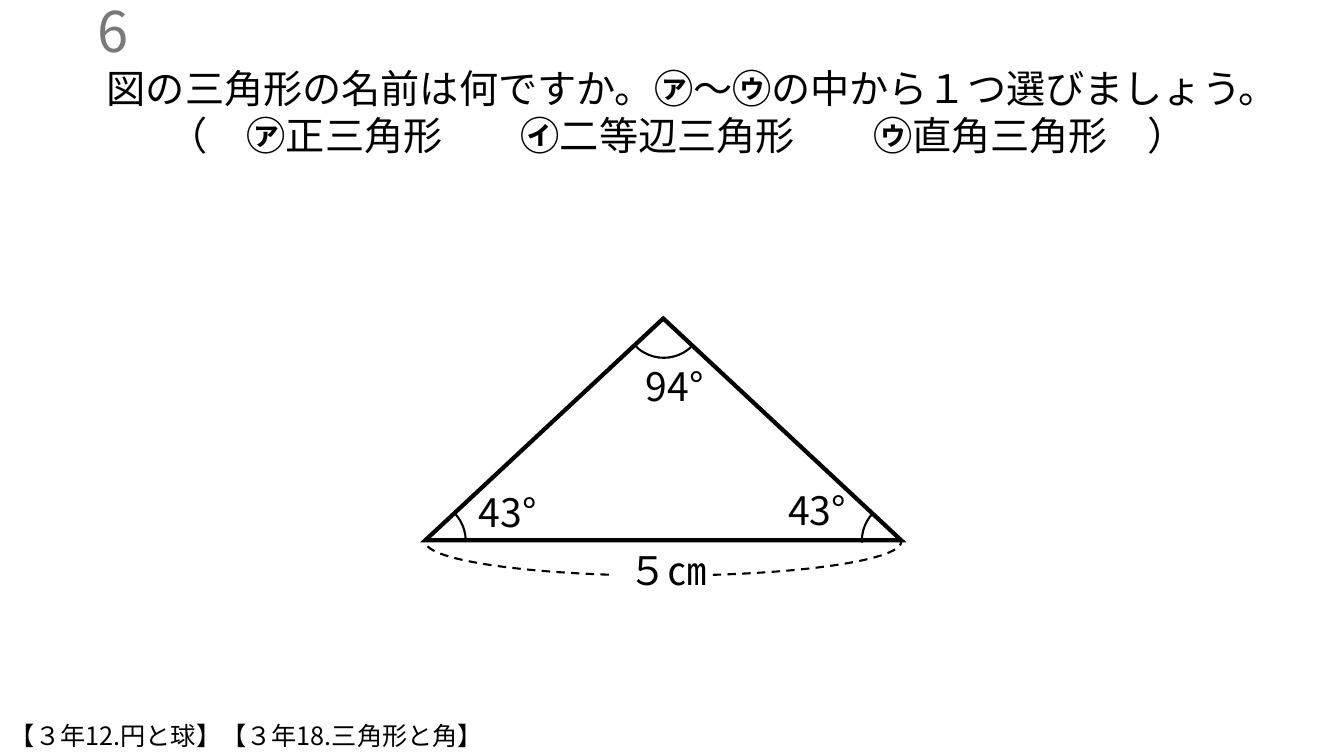
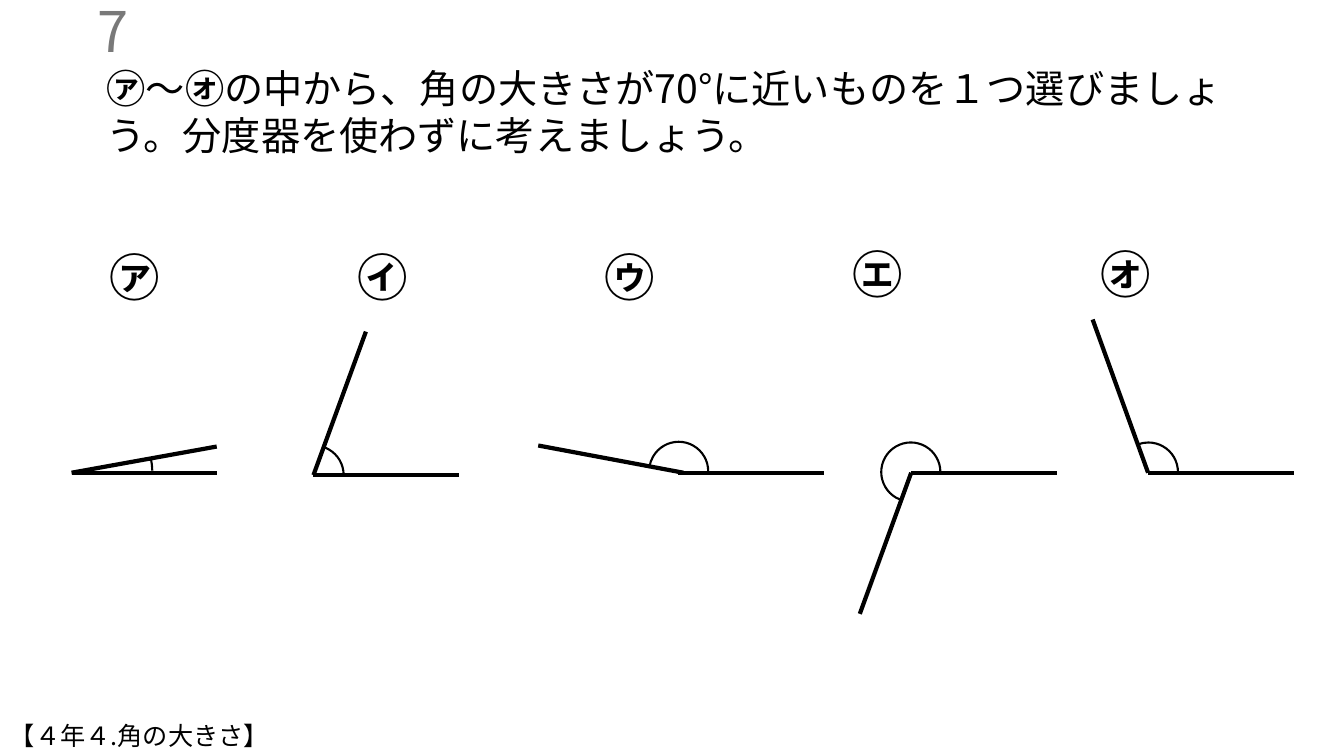
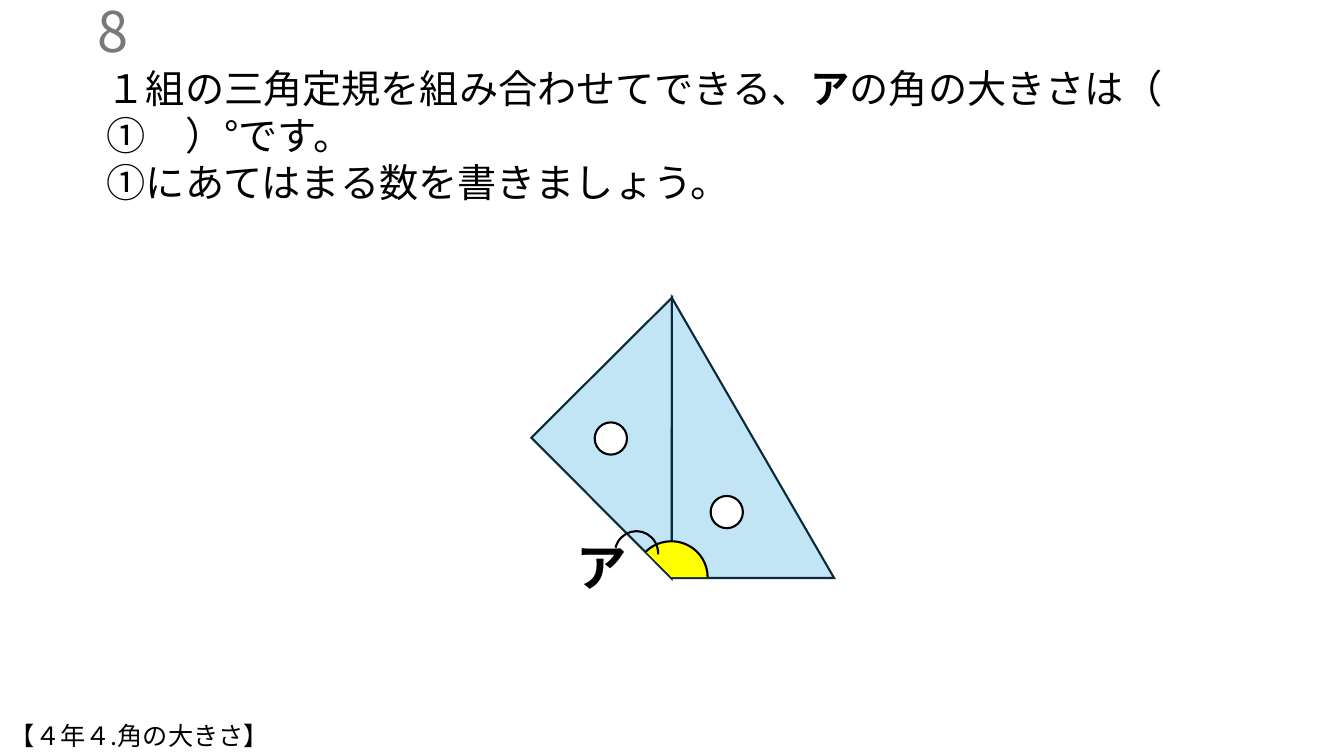
import dataclasses
import typing

import lxml.etree
import pptx
import pptx.dml.color
import pptx.enum.dml
import pptx.enum.lang
import pptx.enum.shapes
import pptx.enum.text
import pptx.oxml.ns
import pptx.util

Kind = pptx.enum.shapes.MSO_SHAPE
Align = pptx.enum.text.PP_ALIGN
Anchor = pptx.enum.text.MSO_ANCHOR
Color = pptx.dml.color.RGBColor

BLACK = Color(0x00, 0x00, 0x00)
WHITE = Color(0xFF, 0xFF, 0xFF)
GRAY = Color(0x79, 0x79, 0x79)
SKY = Color(0xC1, 0xE5, 0xF5)
NAVY = Color(0x09, 0x2A, 0x39)
YELLOW = Color(0xFF, 0xFF, 0x00)

FONT = "Noto Sans CJK JP"
COLS, ROWS = 40, 22.5
CELL = pptx.util.Inches(1) / 3
LEADING = 1.2
ARC_UNIT = 0.6


class Box(typing.NamedTuple):
    x: float
    y: float
    w: float
    h: float


class Run(typing.NamedTuple):
    text: str
    bold: bool = False


class Para(typing.NamedTuple):
    runs: list[Run]
    align: Align = Align.LEFT


@dataclasses.dataclass(frozen=True)
class Style:
    size: float = 28
    color: Color = BLACK
    anchor: Anchor = Anchor.TOP


@dataclasses.dataclass(frozen=True)
class Form:
    kind: Kind
    box: Box
    fill: Color | None = None
    line: Color = BLACK
    width: float = 1.5
    adjust: tuple[float, ...] = ()
    turn: float = 0
    flip: str = ""
    dash: bool = False


@dataclasses.dataclass(frozen=True)
class Angle:
    label: str
    top: float
    root: float
    foot: float
    base: float
    tip: tuple[float, float]
    hub: tuple[float, float]
    start: float
    reach: float = 0.88


BODY = Style()
MARK = Style(size=36)
NOTE = Style(size=18)
COUNT = Style(size=40, color=GRAY, anchor=Anchor.MIDDLE)


def grid(*cells: float) -> list[int]:
    return [round(cell * CELL) for cell in cells]


def add_child(parent: typing.Any, tag: str, **attrs: str) -> None:
    child = lxml.etree.SubElement(parent, pptx.oxml.ns.qn(tag))
    for key, value in attrs.items():
        child.set(key, value)


def write(shape: typing.Any, paras: list[Para], style: Style) -> None:
    frame = shape.text_frame
    frame.word_wrap = True
    frame.auto_size = pptx.enum.text.MSO_AUTO_SIZE.NONE
    frame.vertical_anchor = style.anchor
    for index, para in enumerate(paras):
        line = frame.add_paragraph() if index else frame.paragraphs[0]
        line.alignment = para.align
        line.line_spacing = pptx.util.Pt(style.size * LEADING)
        line.space_before = pptx.util.Pt(0)
        line._p.get_or_add_pPr().set("hangingPunct", "1")
        for part in para.runs:
            run = line.add_run()
            run.text = part.text
            run.font.size = pptx.util.Pt(style.size)
            run.font.bold = part.bold
            run.font.color.rgb = style.color
            run.font.name = FONT
            run.font.language_id = pptx.enum.lang.MSO_LANGUAGE_ID.JAPANESE
            add_child(run._r.get_or_add_rPr(), "a:ea", typeface=FONT)


def add_text(slide: typing.Any, box: Box, text: str, style: Style = BODY,
             bold: bool = False, align: Align = Align.LEFT) -> None:
    shape = slide.shapes.add_textbox(*grid(*box))
    write(shape, [Para([Run(text, bold)], align)], style)


def add_form(slide: typing.Any, form: Form) -> None:
    shape = slide.shapes.add_shape(form.kind, *grid(*form.box))
    shape.shadow.inherit = False
    shape.rotation = form.turn
    for index, value in enumerate(form.adjust):
        shape.adjustments[index] = value
    if form.flip:
        shape._element.spPr.get_or_add_xfrm().set(form.flip, "1")
    if form.fill is None:
        shape.fill.background()
    else:
        shape.fill.solid()
        shape.fill.fore_color.rgb = form.fill
    shape.line.color.rgb = form.line
    shape.line.width = pptx.util.Pt(form.width)
    if form.dash:
        shape.line.dash_style = pptx.enum.dml.MSO_LINE.DASH
    add_child(shape.line._get_or_add_ln(), "a:miter", lim="800000")


def arc(box: Box, start: float, end: float = 0, **more: typing.Any) -> Form:
    return Form(Kind.ARC, box, adjust=(start * ARC_UNIT, end * ARC_UNIT), **more)


def add_ray(slide: typing.Any, start: tuple[float, float], end: tuple[float, float]) -> None:
    kind = pptx.enum.shapes.MSO_CONNECTOR.STRAIGHT
    ray = slide.shapes.add_connector(kind, *grid(*start, *end))
    ray.line.color.rgb = BLACK
    ray.line.width = pptx.util.Pt(3)
    add_child(ray._element.spPr, "a:effectLst")


def add_page(deck: typing.Any, count: int, wide: float, tall: float,
             paras: list[Para], unit: str) -> typing.Any:
    slide = deck.slides.add_slide(deck.slide_layouts.get_by_name("Title Only"))
    title = slide.shapes.title
    title.left, title.top, title.width, title.height = grid(2.88, 1.77, wide, tall)
    write(title, paras, BODY)
    add_text(slide, Box(0, 0.3, 4.11, 1.2), str(count), COUNT, align=Align.RIGHT)
    add_text(slide, Box(0, 21.3, 22.47, 1.2), unit, NOTE)
    return slide


def add_naming(deck: typing.Any) -> None:
    ask = Para([Run("図の三角形の名前は何ですか。"), Run("㋐", True), Run("～"),
                Run("㋒", True), Run("の中から１つ選びましょう。")])
    picks = Para([Run("（　"), Run("㋐", True), Run("正三角形　　"), Run("㋑", True),
                  Run("二等辺三角形　　"), Run("㋒", True), Run("直角三角形　）")], Align.CENTER)
    slide = add_page(deck, 6, 34.56, 3.12, [ask, picks], "【３年12.円と球】【３年18.三角形と角】")
    span = Box(12.66, 15.12, 14.16, 2.01)
    side = 2.37
    for form in (
        Form(Kind.ISOSCELES_TRIANGLE, Box(12.66, 9.48, 14.16, 6.6), width=3, adjust=(0.5,)),
        arc(Box(11.49, 14.91, side, side), 316.67),
        arc(Box(25.65, 14.91, side, side), 177.33, 222.53),
        arc(Box(18.57, 8.28, side, side), 41.99, 138.12),
        arc(span, 328.88, turn=180, dash=True),
        arc(span, 326.27, turn=180, flip="flipH", dash=True),
    ):
        add_form(slide, form)
    for x, y, text in ((13.95, 14.4, "43°"), (23.16, 14.34, "43°"),
                       (18.42, 16.11, "５㎝"), (18.93, 10.65, "94°")):
        add_text(slide, Box(x, y, 2.97, 1.71), text)


def add_angles(deck: typing.Any) -> None:
    ask = Para([Run("㋐", True), Run("～"), Run("㋔", True),
                Run("の中から、角の大きさが70°に近いものを１つ選びましょう。分度器を使わずに考えましょう。")])
    slide = add_page(deck, 7, 34.8, 3.12, [ask], "【４年４.角の大きさ】")
    angles = [
        Angle("㋐", 7.17, 2.13, 2.13, 14.07, (6.45, 13.29), (3, 14.01), 345.76, 1.53),
        Angle("㋑", 7.17, 9.33, 9.33, 14.14, (10.89, 9.87), (9.35, 14.14), 288.11),
        Angle("㋒", 7.17, 20.19, 20.34, 14.07, (16.02, 13.26), (20.2, 14.03), 188.73),
        Angle("㋓", 7.08, 27.12, 27.12, 14.07, (25.59, 18.27), (27.11, 14.05), 108.97),
        Angle("㋔", 7.08, 34.17, 34.17, 14.07, (32.52, 9.51), (34.18, 14.05), 249.92),
    ]
    for index, angle in enumerate(angles):
        add_ray(slide, (angle.root, angle.base), (angle.root + 4.33, angle.base))
        add_ray(slide, (angle.foot, angle.base), angle.tip)
        x, y = angle.hub
        side = 2 * angle.reach
        add_form(slide, arc(Box(x - angle.reach, y - angle.reach, side, side), angle.start))
        add_text(slide, Box(2.97 + 7.37 * index, angle.top, 1.92, 2.13), angle.label, MARK, True)


def add_rulers(deck: typing.Any) -> None:
    ask = Para([Run("１組の三角定規を組み合わせてできる、"), Run("ア", True),
                Run("の角の大きさは（　①　）°です。")])
    task = Para([Run("①にあてはまる数を書きましょう。")])
    slide = add_page(deck, 8, 34.59, 4.53, [ask, task], "【４年４.角の大きさ】")
    hole = 0.96
    for form in (
        Form(Kind.RIGHT_TRIANGLE, Box(17.04, 10.08, 5.91, 5.91), SKY, NAVY, turn=45.1),
        Form(Kind.OVAL, Box(17.7, 12.57, hole, hole), WHITE),
        Form(Kind.RIGHT_TRIANGLE, Box(18.24, 10.62, 8.34, 4.83), SKY, NAVY,
             turn=270, flip="flipV"),
        Form(Kind.OVAL, Box(21.15, 14.76, hole, hole), WHITE),
        arc(Box(18.9, 16.11, 2.16, 2.13), 225.17, fill=YELLOW),
    ):
        add_form(slide, form)
    add_text(slide, Box(16.86, 15.81, 1.92, 2.13), "ア", MARK, True)
    add_form(slide, arc(Box(18.3, 15.81, 1.29, 1.32), 195.06, 2.76))


def main() -> None:
    deck = pptx.Presentation()
    deck.slide_width, deck.slide_height = grid(COLS, ROWS)
    add_naming(deck)
    add_angles(deck)
    add_rulers(deck)
    deck.save("out.pptx")


if __name__ == "__main__":
    main()
